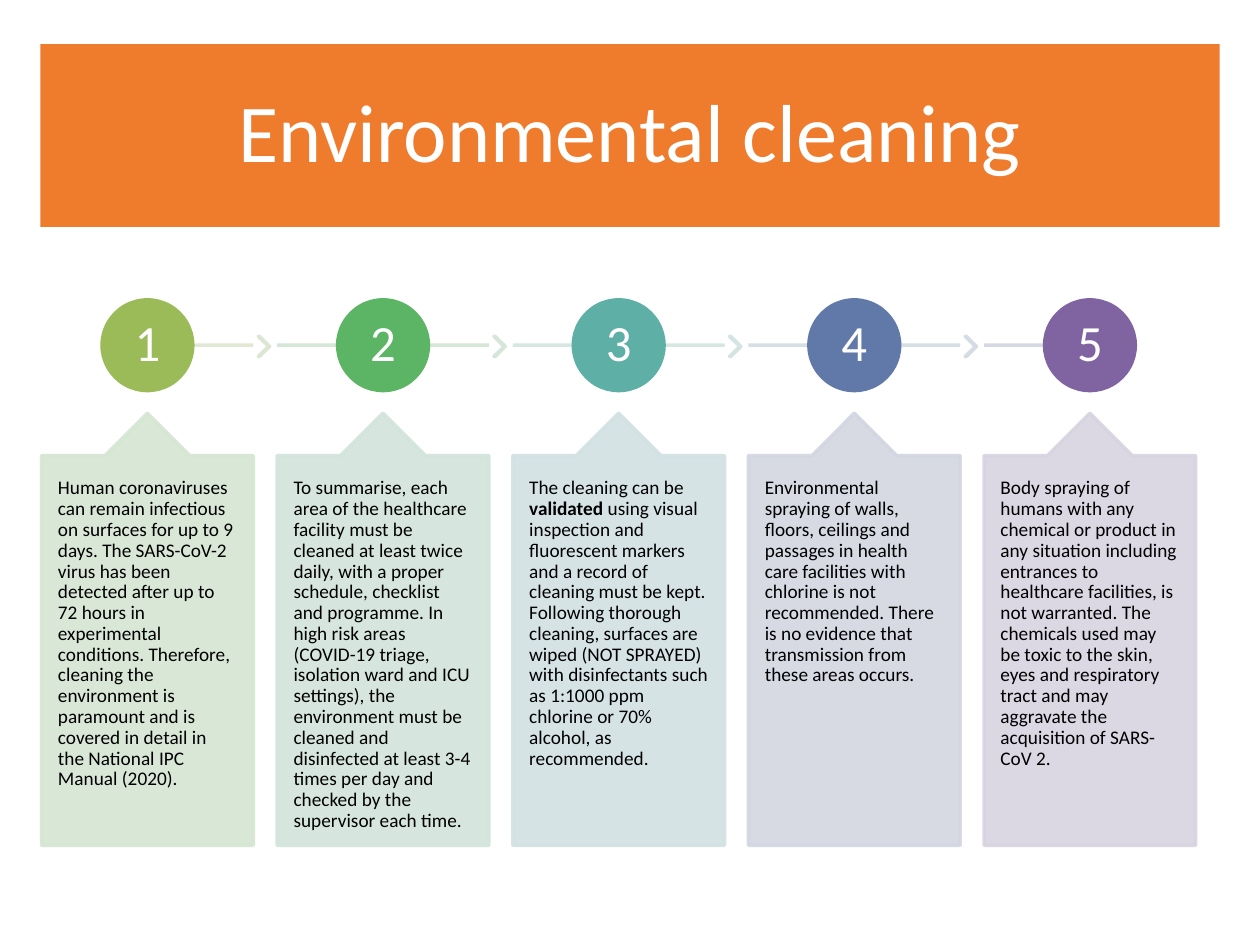
import pptx
import pptx.util
import pptx.dml.color
import pptx.enum.shapes
import pptx.enum.text
import pptx.oxml
import pptx.oxml.ns
from pptx.util import Inches

RGBColor = pptx.dml.color.RGBColor
SHAPE = pptx.enum.shapes.MSO_SHAPE
ALIGN = pptx.enum.text.PP_ALIGN
ANCHOR = pptx.enum.text.MSO_ANCHOR

ORANGE = RGBColor(0xEF, 0x7B, 0x2D)
WHITE = RGBColor(0xFF, 0xFF, 0xFF)
BLACK = RGBColor(0, 0, 0)

TITLE = "Environmental cleaning"
# Each step: (text, bold) runs, then circle, line, chevron and card colours
STEPS = [
    ([("Human coronaviruses can remain infectious on surfaces for up to 9 days. "
       "The SARS-CoV-2 virus has been detected after up to 72 hours in experimental "
       "conditions. Therefore, cleaning the environment is paramount and is covered "
       "in detail in the National IPC Manual (2020).", False)],
     "9BBB59", "DEE7D1", "D9E6D1", "D5E6D2"),
    ([("To summarise, each area of the healthcare facility must be cleaned at least "
       "twice daily, with a proper schedule, checklist and programme. In high risk "
       "areas (COVID-19 triage, isolation ward and ICU settings), the environment "
       "must be cleaned and disinfected at least 3-4 times per day and checked by "
       "the supervisor each time.", False)],
     "5CB565", "D2E5D3", "D2E5D7", "D2E4DB"),
    ([("The cleaning can be", False), (" validated ", True),
      ("using visual inspection and fluorescent markers and a record of cleaning "
       "must be kept. Following thorough cleaning, surfaces are wiped (NOT SPRAYED) "
       "with disinfectants such as 1:1000 ppm chlorine or 70% alcohol, as "
       "recommended.", False)],
     "5EAFA6", "D2E4DE", "D2E3E2", "D2E1E3"),
    ([("Environmental spraying of walls, floors, ceilings and passages in health "
       "care facilities with chlorine is not recommended. There is no evidence that "
       "transmission from these areas occurs.", False)],
     "6179A8", "D2DDE2", "D2DAE2", "D3D6E1"),
    ([("Body spraying of humans with any chemical or product in any situation "
       "including entrances to healthcare facilities, is not warranted. The "
       "chemicals used may be toxic to the skin, eyes and respiratory tract and may "
       "aggravate the acquisition of SARS-CoV 2.", False)],
     "8064A2", "D3D3E1", None, "D8D3E0"),
]

LEFT, PITCH = 0.33, 1.87
CARD_TOP, CARD_WIDTH, CARD_HEIGHT = 3.28, 1.68, 3.43
CIRCLE_TOP, CIRCLE_SIZE = 2.38, 0.72
LINE_Y = CIRCLE_TOP + CIRCLE_SIZE / 2


def write_text(shape, runs, *, size, color, align=ALIGN.LEFT, anchor=ANCHOR.MIDDLE,
               margins=(0.1, 0.05), spacing=0.9):
    frame = shape.text_frame
    frame.word_wrap = True
    frame.auto_size = pptx.enum.text.MSO_AUTO_SIZE.NONE
    frame.vertical_anchor = anchor
    frame.margin_left = frame.margin_right = Inches(margins[0])
    frame.margin_top = frame.margin_bottom = Inches(margins[1])
    paragraph = frame.paragraphs[0]
    paragraph.alignment = align
    paragraph.line_spacing = spacing
    for text, bold in runs:
        run = paragraph.add_run()
        run.text = text
        run.font.name = "Calibri"
        run.font.size = pptx.util.Pt(size)
        run.font.bold = bold
        run.font.color.rgb = color


def make_translucent(shape, opacity=90):
    """Set the opacity, in percent, of every colour in the shape's fill and line."""
    for color in shape._element.spPr.iter(pptx.oxml.ns.qn("a:srgbClr")):
        alpha = pptx.oxml.parse_xml(
            f'<a:alpha {pptx.oxml.ns.nsdecls("a")} val="{opacity * 1000}"/>')
        color.append(alpha)


def add_filled_shape(slide, kind, left, top, width, height, color, adjustments=()):
    shape = slide.shapes.add_shape(
        kind, Inches(left), Inches(top), Inches(width), Inches(height))
    shape.shadow.inherit = False
    shape.fill.solid()
    shape.fill.fore_color.rgb = color
    shape.line.color.rgb = color
    shape.line.width = pptx.util.Pt(2)
    for index, value in enumerate(adjustments):
        shape.adjustments[index] = value
    return shape


def add_line(slide, start, end, color):
    line = slide.shapes.add_connector(
        pptx.enum.shapes.MSO_CONNECTOR.STRAIGHT,
        Inches(start), Inches(LINE_Y), Inches(end), Inches(LINE_Y))
    line.line.color.rgb = color
    line.line.width = pptx.util.Pt(2)
    line._element.spPr.append(
        pptx.oxml.parse_xml(f'<a:effectLst {pptx.oxml.ns.nsdecls("a")}/>'))
    make_translucent(line)


def add_title(slide):
    title = slide.shapes.title
    title.left, title.top = Inches(0.32), Inches(0.35)
    title.width, title.height = Inches(9.36), Inches(1.45)
    title.fill.solid()
    title.fill.fore_color.rgb = ORANGE
    write_text(title, [(TITLE, False)], size=47, color=WHITE, align=ALIGN.CENTER)


def add_step(slide, index, runs, *colors):
    circle_color, line_color, chevron_color, card_color = (
        color and RGBColor.from_string(color) for color in colors)
    left = LEFT + index * PITCH
    center = left + CARD_WIDTH / 2
    first, last = index == 0, index == len(STEPS) - 1

    add_line(slide, center if first else left,
             center if last else left + CARD_WIDTH, line_color)
    if not last:
        chevron = add_filled_shape(slide, SHAPE.CHEVRON, left + 1.72, 2.67,
                                   0.09, 0.16, chevron_color, [0.9])
        make_translucent(chevron)

    circle = add_filled_shape(slide, SHAPE.OVAL, center - CIRCLE_SIZE / 2, CIRCLE_TOP,
                              CIRCLE_SIZE, CIRCLE_SIZE, circle_color)
    write_text(circle, [(str(index + 1), False)], size=29, color=WHITE,
               align=ALIGN.CENTER, margins=(0.03, 0.03))

    card = add_filled_shape(slide, SHAPE.UP_ARROW_CALLOUT, left, CARD_TOP, CARD_WIDTH,
                            CARD_HEIGHT, card_color, [0.5, 0.2, 0.2, 1])
    make_translucent(card)
    write_text(card, runs, size=11, color=BLACK, anchor=ANCHOR.TOP, margins=(0.13, 0.18))


def main():
    presentation = pptx.Presentation()
    presentation.slide_width, presentation.slide_height = Inches(10), Inches(7.5)
    slide = presentation.slides.add_slide(presentation.slide_layouts[5])
    add_title(slide)
    for index, step in enumerate(STEPS):
        add_step(slide, index, *step)
    presentation.save("out.pptx")


if __name__ == "__main__":
    main()
